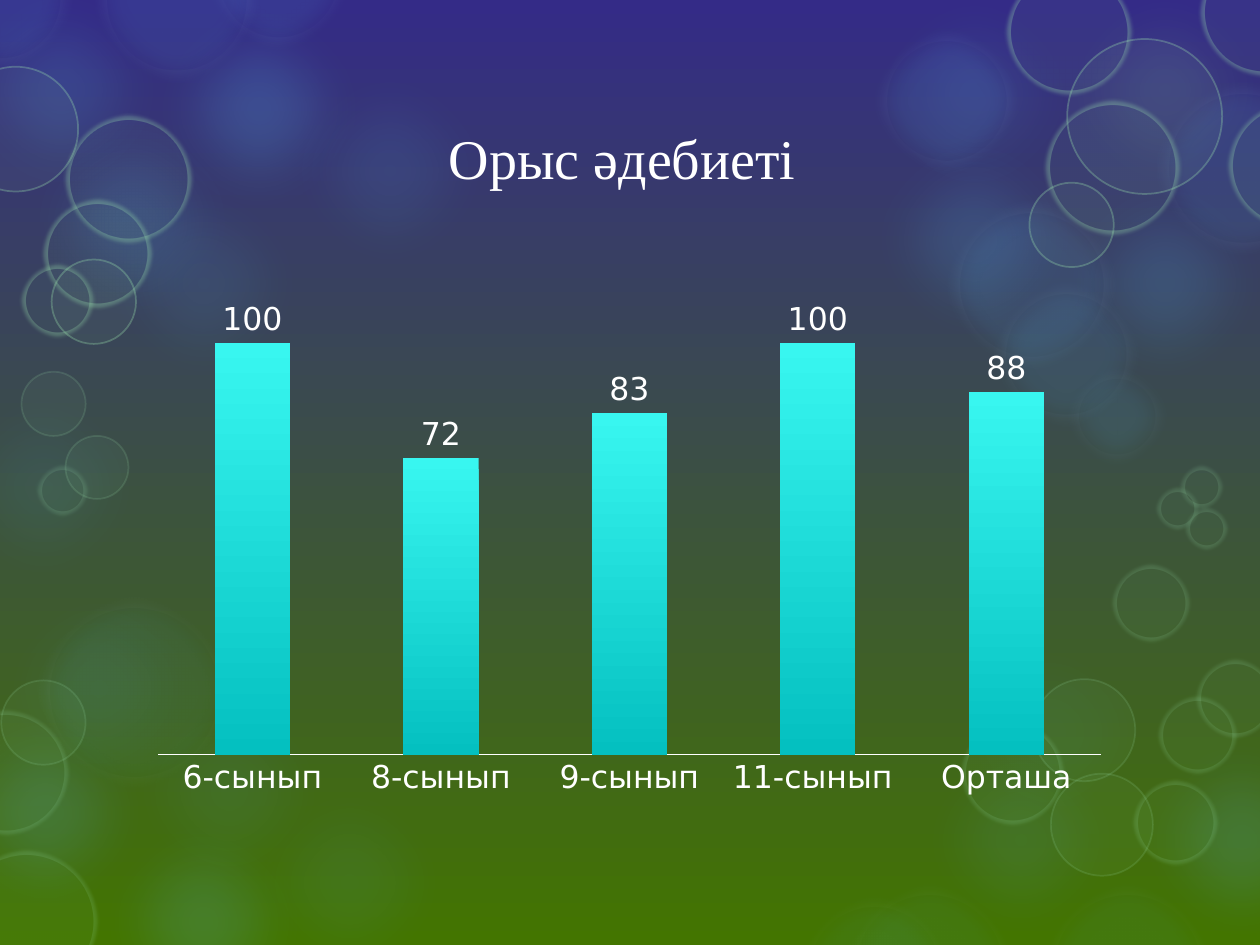
import pptx
import pptx.chart.data
import pptx.dml.color
import pptx.enum.chart
import pptx.enum.shapes
import pptx.enum.text
import pptx.oxml
import pptx.oxml.ns
import pptx.util

Inches = pptx.util.Inches
Pt = pptx.util.Pt
RGBColor = pptx.dml.color.RGBColor

WHITE = RGBColor(0xFF, 0xFF, 0xFF)
INDIGO = RGBColor(0x34, 0x2B, 0x87)
OLIVE = RGBColor(0x43, 0x75, 0x00)
SKY = RGBColor(0x5B, 0xBA, 0xF6)
PALE = RGBColor(0xDD, 0xF1, 0xFD)
MINT = RGBColor(0x9D, 0xE3, 0xAE)
BAR_TOP = RGBColor(0x38, 0xF6, 0xF0)
BAR_BASE = RGBColor(0x04, 0xC0, 0xC0)

# Large glows: left, top, opacity in percent
GLOW_SIZE = 2.09
GLOWS = [
    (-0.26, 4.42, 8), (0.57, 1.2, 10), (2.05, 0.31, 10), (0.57, 6.27, 16),
    (-0.56, -0.33, 14), (1.01, -0.18, 20), (0, 0.72, 15), (6.69, -0.3, 10),
    (8.2, 1.2, 15), (8.81, 5.62, 16), (7.29, 4.77, 5), (-0.69, 5.41, 16),
    (0.77, 5.24, 8), (6.69, 0.86, 15), (7.06, 5.62, 10), (1.73, 5.96, 8),
    (-0.7, 2.82, 8),
]
# The rest: left, top, diameter
HAZES = [
    (9.18, 0.65, 1.37), (6.94, 0.23, 1.14), (7.52, 1.59, 1.33),
    (7.89, 2.24, 1.14), (8.47, 2.91, 0.79), (0.75, -0.65, 1.3),
    (1.64, -0.75, 1.14), (-0.57, -0.58, 1.14),
]
FAINT_HAZES = [(0.3, 4.73, 1.53), (6.32, 7.1, 1.24), (6.7, 7.01, 1.36),
               (8.27, 7.01, 1.36)]
RINGS = [(-0.37, 0.53, 0.99), (0.41, 2.06, 0.67), (8.47, 0.31, 1.23),
         (8.17, 1.45, 0.67)]
FAINT_RINGS = [(0.01, 5.4, 0.67), (8.34, 6.14, 0.81), (8.2, 5.39, 0.81),
               (0.17, 2.95, 0.51), (0.52, 3.46, 0.5)]
SOFT_RINGS = [
    (0.52, 0.92, 1), (0.35, 1.59, 0.85), (0.17, 2.1, 0.57),
    (7.99, -0.24, 0.99), (9.53, -0.4, 1), (9.75, 0.82, 0.99),
    (8.3, 0.8, 1.06),
]
FAINT_SOFT_RINGS = [
    (-0.35, 6.75, 1.12), (-0.44, 5.64, 0.98), (7.63, 5.73, 0.81),
    (9, 6.2, 0.66), (8.83, 4.48, 0.61), (9.2, 5.53, 0.61), (9.5, 5.24, 0.61),
    (9.37, 3.7, 0.33), (9.18, 3.87, 0.33), (9.41, 4.03, 0.33),
    (0.3, 3.7, 0.39),
]


def fill_gradient(fill, top, bottom):
    fill.gradient()
    fill.gradient_angle = 270
    for stop, color, position in zip(fill.gradient_stops, (top, bottom), (0, 1)):
        stop.color.rgb = color
        stop.position = position


def set_opacity(paint, percent):
    color = paint.find(".//" + pptx.oxml.ns.qn("a:srgbClr"))
    alpha = color.makeelement(pptx.oxml.ns.qn("a:alpha"),
                              {"val": str(percent * 1000)})
    color.append(alpha)


def soften(shape, radius):
    properties = shape.element.spPr
    effects = properties.find(pptx.oxml.ns.qn("a:effectLst"))
    soft = effects.makeelement(pptx.oxml.ns.qn("a:softEdge"),
                               {"rad": str(int(Pt(radius)))})
    effects.append(soft)


def add_bubble(page, place, color, opacity, soft=0, line=None):
    """line holds colour, width in points and opacity."""
    left, top, size = place
    bubble = page.shapes.add_shape(pptx.enum.shapes.MSO_SHAPE.OVAL,
                                   Inches(left), Inches(top),
                                   Inches(size), Inches(size))
    bubble.shadow.inherit = False
    bubble.fill.solid()
    bubble.fill.fore_color.rgb = color
    set_opacity(bubble.element.spPr.find(pptx.oxml.ns.qn("a:solidFill")), opacity)
    if line:
        line_color, width, line_opacity = line
        bubble.line.color.rgb = line_color
        bubble.line.width = Pt(width)
        set_opacity(bubble.element.spPr.find(pptx.oxml.ns.qn("a:ln")), line_opacity)
    else:
        bubble.line.fill.background()
    if soft:
        soften(bubble, soft)


def add_bubbles(page):
    for left, top, opacity in GLOWS:
        add_bubble(page, (left, top, GLOW_SIZE), SKY, opacity, soft=32)
    add_bubble(page, (8.2, -0.33, GLOW_SIZE), MINT, 10, soft=32)
    groups = [
        (HAZES, SKY, 10, 12, (PALE, 14, 6)),
        (FAINT_HAZES, SKY, 6, 12, (PALE, 14, 4)),
        (RINGS, MINT, 5, 0, (MINT, 1, 30)),
        (FAINT_RINGS, MINT, 5, 0, (MINT, 1, 15)),
        (SOFT_RINGS, MINT, 5, 2.5, (MINT, 5, 30)),
        (FAINT_SOFT_RINGS, MINT, 5, 2.5, (MINT, 5, 15)),
    ]
    for places, color, opacity, soft, line in groups:
        for place in places:
            add_bubble(page, place, color, opacity, soft, line)


def add_title(page, text):
    box = page.shapes.add_textbox(Inches(1.1), Inches(0.74),
                                  Inches(7.79), Inches(1.01))
    frame = box.text_frame
    frame.word_wrap = True
    frame.vertical_anchor = pptx.enum.text.MSO_ANCHOR.MIDDLE
    para = frame.paragraphs[0]
    para.alignment = pptx.enum.text.PP_ALIGN.CENTER
    span = para.add_run()
    span.text = text
    span.font.name = "Times New Roman"
    span.font.size = Pt(32)
    span.font.color.rgb = WHITE


def add_grade_chart(page):
    data = pptx.chart.data.CategoryChartData()
    data.categories = ["6-сынып", "8-сынып", "9-сынып", "11-сынып ", "Орташа"]
    data.add_series("Series 1", [100, 72, 83, 100, 88])
    chart = page.shapes.add_chart(
        pptx.enum.chart.XL_CHART_TYPE.COLUMN_CLUSTERED,
        Inches(1.1), Inches(1.98), Inches(7.79), Inches(4.43), data).chart
    chart.has_legend = False
    chart.has_title = False
    chart.font.name = "DejaVu Sans"
    chart.font.size = Pt(18)
    chart.font.color.rgb = WHITE

    # Axes
    grades = chart.category_axis
    grades.major_tick_mark = pptx.enum.chart.XL_TICK_MARK.NONE
    grades.format.line.color.rgb = WHITE
    scores = chart.value_axis
    scores.visible = False
    scores.has_major_gridlines = False
    scores.minimum_scale = 0
    scores.maximum_scale = 120

    # Columns
    plot = chart.plots[0]
    plot.gap_width = 150
    plot.vary_by_categories = False
    fill_gradient(plot.series[0].format.fill, BAR_TOP, BAR_BASE)
    plot.has_data_labels = True
    plot.data_labels.show_value = True
    plot.data_labels.position = pptx.enum.chart.XL_LABEL_POSITION.OUTSIDE_END


def main():
    deck = pptx.Presentation()
    deck.slide_width = Inches(10)
    deck.slide_height = Inches(7.5)
    page = deck.slides.add_slide(deck.slide_layouts[6])
    fill_gradient(page.background.fill, INDIGO, OLIVE)
    add_bubbles(page)
    add_title(page, "Орыс әдебиеті ")
    add_grade_chart(page)
    deck.save("out.pptx")


if __name__ == "__main__":
    main()
